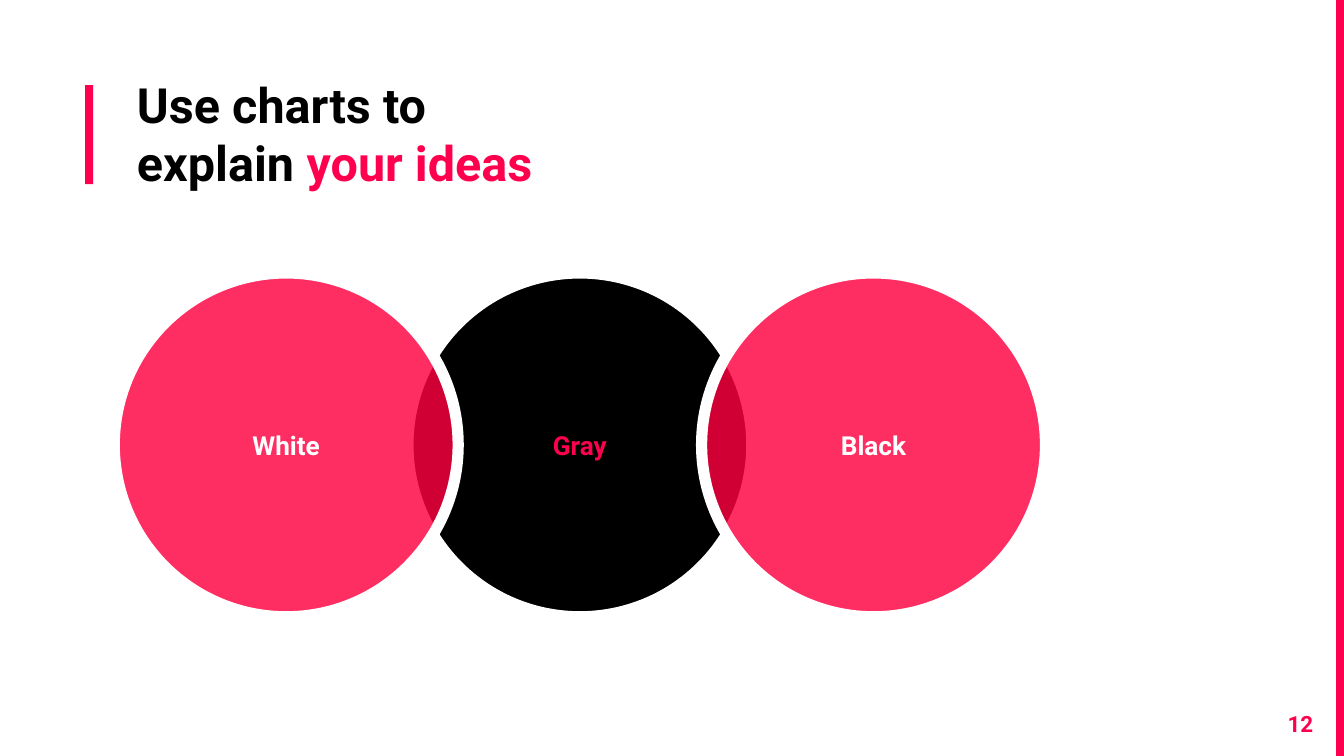
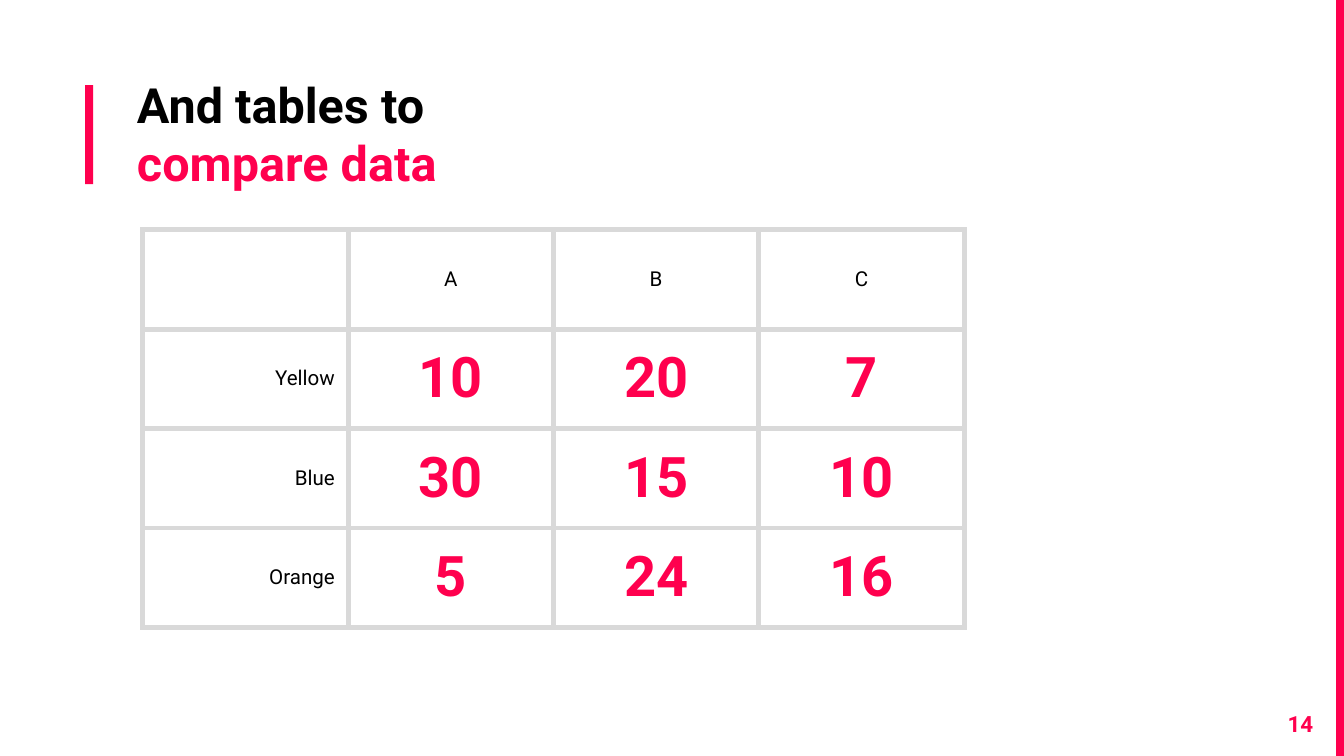
from lxml import etree
from pptx import Presentation
from pptx.dml.color import RGBColor
from pptx.enum.shapes import MSO_SHAPE
from pptx.enum.text import MSO_ANCHOR, PP_ALIGN
from pptx.oxml.ns import qn
from pptx.util import Cm, Pt

RECTANGLE, OVAL = MSO_SHAPE.RECTANGLE, MSO_SHAPE.OVAL
MIDDLE = MSO_ANCHOR.MIDDLE
LEFT, CENTER, RIGHT = PP_ALIGN.LEFT, PP_ALIGN.CENTER, PP_ALIGN.RIGHT

FONT = "Roboto"
PINK, RED, BLACK, WHITE, GRAY = "FF004E", "FF0040", "000000", "FFFFFF", "D9D9D9"
WIDTH, HEIGHT = 25.4, 14.29
MARGIN = 0.25


def rgb(color):
    return RGBColor.from_string(color)


def write(frame, text, size=14, color=BLACK, bold=True, align=LEFT):
    """Add a run to the first paragraph of a text frame or cell frame."""
    frame.word_wrap = True
    para = frame.paragraphs[0]
    para.alignment = align
    span = para.add_run()
    span.text = text
    span.font.name = FONT
    span.font.size = Pt(size)
    span.font.bold = bold
    span.font.color.rgb = rgb(color)


deck = Presentation()
deck.slide_width, deck.slide_height = Cm(WIDTH), Cm(HEIGHT)

# Shared frame: accent bar, right band, two-colour title, page number
pages = []
for number, lead, accent in [
    (12, "Use charts to explain ", "your ideas"),
    (14, "And tables to ", "compare data"),
]:
    page = deck.slides.add_slide(deck.slide_layouts[6])
    pages.append(page)
    for left, top, width, height in [
        (1.61, 1.61, 0.15, 1.87),
        (WIDTH - 0.15, 0, 0.15, HEIGHT),
    ]:
        bar = page.shapes.add_shape(RECTANGLE, Cm(left), Cm(top), Cm(width), Cm(height))
        bar.shadow.inherit = False
        bar.fill.solid()
        bar.fill.fore_color.rgb = rgb(PINK)
        bar.line.fill.background()

    title = page.shapes.add_textbox(Cm(2.34), Cm(1.17), Cm(8.97), Cm(2.39))
    footer = page.shapes.add_textbox(Cm(23.55), Cm(13.18), Cm(1.52), Cm(1.09))
    for box in (title, footer):
        frame = box.text_frame
        frame.margin_left = frame.margin_right = Cm(MARGIN)
        frame.margin_top = frame.margin_bottom = Cm(MARGIN)
    write(title.text_frame, lead, size=26)
    write(title.text_frame, accent, size=26, color=PINK)
    write(footer.text_frame, str(number), size=12, color=PINK, align=RIGHT)

chart_page, table_page = pages

# Overlapping circles, the middle one at the back
DIAMETER, STEP = 6.5, 5.55
for label, position, fill, color, opacity in [
    ("Gray", 1, BLACK, PINK, 100),
    ("White", 0, RED, WHITE, 82),
    ("Black", 2, RED, WHITE, 82),
]:
    circle = chart_page.shapes.add_shape(
        OVAL, Cm(2.16 + position * STEP), Cm(5.16), Cm(DIAMETER), Cm(DIAMETER))
    circle.shadow.inherit = False
    circle.fill.solid()
    circle.fill.fore_color.rgb = rgb(fill)
    if opacity < 100:
        tint = circle.element.spPr.find(qn("a:solidFill")).find(qn("a:srgbClr"))
        etree.SubElement(tint, qn("a:alpha"), val=str(opacity * 1000))
    circle.line.color.rgb = rgb(WHITE)
    circle.line.width = Pt(6)
    circle.text_frame.vertical_anchor = MIDDLE
    write(circle.text_frame, label, color=color, align=CENTER)

# Comparison table
ROWS = [
    ["", "A", "B", "C"],
    ["Yellow", "10", "20", "7"],
    ["Blue", "30", "15", "10"],
    ["Orange", "5", "24", "16"],
]
COLUMN_WIDTH, ROW_HEIGHT = 3.88, 1.88
count = len(ROWS)
table = table_page.shapes.add_table(
    count, count, Cm(2.7), Cm(4.34),
    Cm(count * COLUMN_WIDTH), Cm(count * ROW_HEIGHT)).table
table.first_row = table.horz_banding = False

for row, values in enumerate(ROWS):
    for column, value in enumerate(values):
        cell = table.cell(row, column)
        cell.fill.background()
        cell.vertical_anchor = MIDDLE
        cell.margin_left = cell.margin_right = Cm(MARGIN)
        cell.margin_top = cell.margin_bottom = Cm(0.18)
        if value:
            is_number = row > 0 and column > 0
            write(cell.text_frame, value,
                  size=30 if is_number else 11,
                  color=PINK if is_number else BLACK,
                  bold=is_number,
                  align=CENTER if column else RIGHT)

        # Borders come before the fill in the cell properties
        properties = cell._tc.get_or_add_tcPr()
        for index, side in enumerate(("lnL", "lnR", "lnT", "lnB")):
            border = etree.Element(qn(f"a:{side}"), w=str(Pt(3)))
            solid = etree.SubElement(border, qn("a:solidFill"))
            etree.SubElement(solid, qn("a:srgbClr"), val=GRAY)
            properties.insert(index, border)

deck.save("out.pptx")
